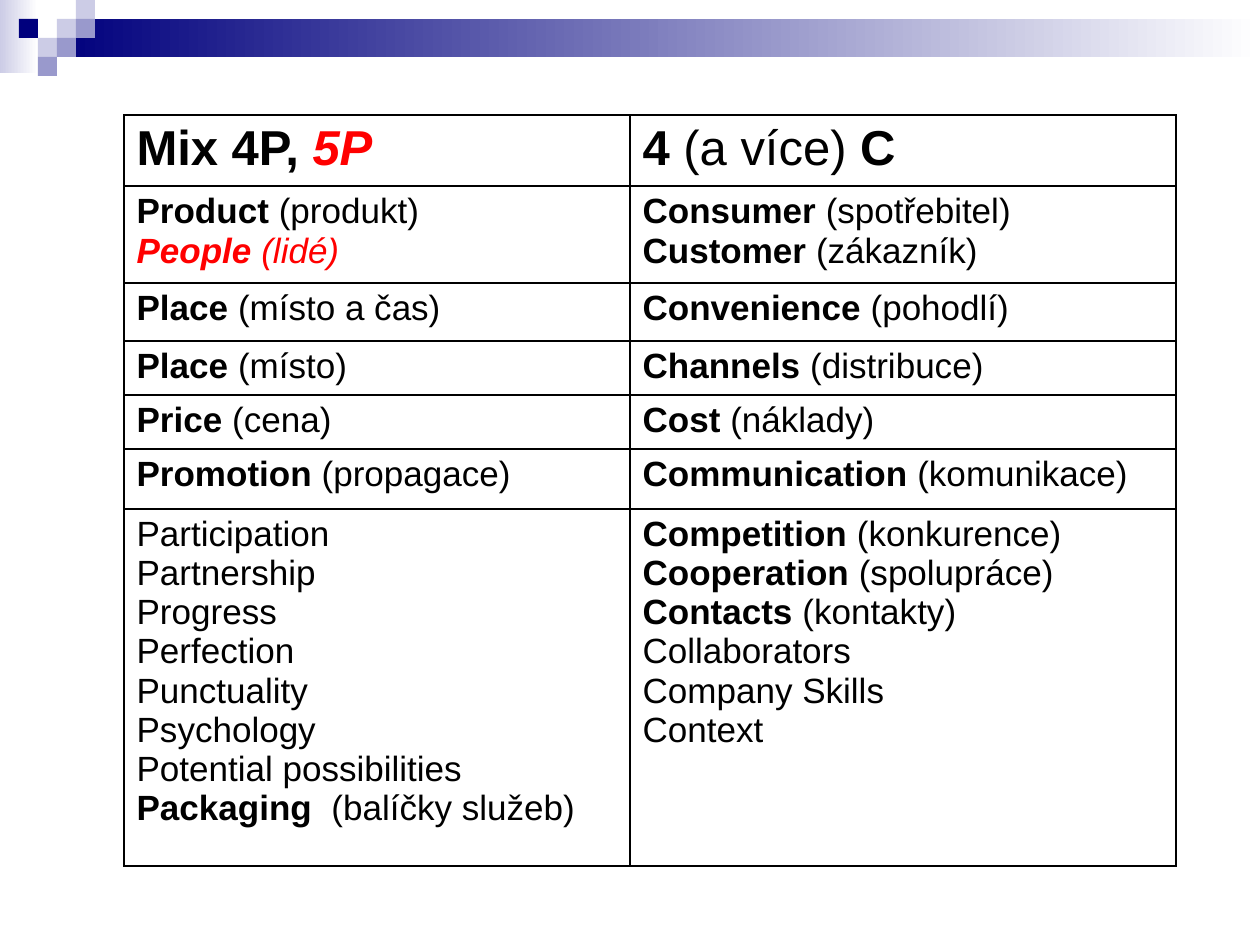
from lxml.etree import SubElement
from pptx import Presentation
from pptx.dml.color import RGBColor
from pptx.enum.shapes import MSO_SHAPE
from pptx.oxml.ns import qn
from pptx.util import Pt

PX = 914400 // 126
NAVY = RGBColor(0x00, 0x00, 0x7D)
LILAC = RGBColor(0xCC, 0xCC, 0xE6)
VIOLET = RGBColor(0x99, 0x99, 0xCC)
WHITE = RGBColor(0xFF, 0xFF, 0xFF)
BLACK = RGBColor(0x00, 0x00, 0x00)
RED = RGBColor(0xFF, 0x00, 0x00)

BOLD = dict(bold=True)
RED_ITALIC = dict(italic=True, color=RED)
RED_BOLD = dict(bold=True, italic=True, color=RED)

SQUARES = [(3, 1, LILAC), (4, 0, LILAC), (4, 1, VIOLET), (2, 2, LILAC),
           (1, 1, NAVY), (3, 2, VIOLET), (2, 3, VIOLET)]


def term(name, note):
    return [(name, BOLD), (note, {})]


def plain(*lines):
    return [[(line, {})] for line in lines]


COLUMNS = [506, 546]
HEADER = [[[("Mix 4P, ", BOLD), ("5P", RED_BOLD)]],
          [[("4 ", BOLD), ("(a více)", {}), (" C", BOLD)]]]
ROWS = [
    (97, [[term("Product ", "(produkt)"),
           [("People ", RED_BOLD), ("(lidé)", RED_ITALIC)]],
          [term("Consumer ", "(spotřebitel) ") + term("Customer ", "(zákazník)")]]),
    (58, [[term("Place ", "(místo a čas)")], [term("Convenience ", "(pohodlí)")]]),
    (54, [[term("Place ", "(místo)")], [term("Channels ", "(distribuce)")]]),
    (54, [[term("Price ", "(cena)")], [term("Cost ", "(náklady)")]]),
    (60, [[term("Promotion ", "(propagace)")],
          [term("Communication ", "(komunikace)")]]),
    (357, [plain("Participation", "Partnership", "Progress", "Perfection",
                 "Punctuality", "Psychology", "Potential possibilities")
           + [term("Packaging ", " (balíčky služeb)")],
           [term("Competition ", "(konkurence)"),
            term("Cooperation", " (spolupráce)"),
            term("Contacts ", "(kontakty)")]
           + plain("Collaborators", "Company Skills", "Context")]),
]


def add_run(p, text, size=20, bold=False, italic=False, color=BLACK):
    r = p.add_run()
    r.text = text
    r.font.name = "Arial"
    r.font.size = Pt(size)
    r.font.bold = bold
    r.font.italic = italic
    r.font.color.rgb = color


def add_rect(s, x, y, w, h, color, fade=False):
    sp = s.shapes.add_shape(MSO_SHAPE.RECTANGLE, x * PX, y * PX, w * PX, h * PX)
    sp.shadow.inherit = False
    sp.line.fill.background()
    if fade:
        sp.fill.gradient()
        sp.fill.gradient_angle = 0
        for stop, rgb in zip(sp.fill.gradient_stops, (color, WHITE)):
            stop.color.rgb = rgb
    else:
        sp.fill.solid()
        sp.fill.fore_color.rgb = color


def add_banner(s, x, y, w, unit):
    add_rect(s, x, y, 2 * unit, 73, LILAC, fade=True)
    add_rect(s, x + 3 * unit, y + unit, w - 3 * unit, 2 * unit, NAVY, fade=True)
    for col, row, color in SQUARES:
        add_rect(s, x + col * unit, y + row * unit, unit, unit, color)


def add_borders(cell):
    tcPr = cell._tc.get_or_add_tcPr()
    for i, side in enumerate(("lnL", "lnR", "lnT", "lnB")):
        ln = tcPr.makeelement(qn(f"a:{side}"), {"w": str(Pt(1))})
        fill = SubElement(ln, qn("a:solidFill"))
        SubElement(fill, qn("a:srgbClr"), val=str(BLACK))
        tcPr.insert(i, ln)


def fill_cell(cell, paragraphs, size):
    cell.fill.solid()
    cell.fill.fore_color.rgb = WHITE
    add_borders(cell)
    tf = cell.text_frame
    for i, runs in enumerate(paragraphs):
        p = tf.add_paragraph() if i else tf.paragraphs[0]
        for text, style in runs:
            add_run(p, text, size=size, **style)


def add_mix_table(s, x, y):
    rows = [(71, HEADER)] + ROWS
    height = sum(h for h, _ in rows)
    table = s.shapes.add_table(len(rows), len(COLUMNS), x * PX, y * PX,
                               sum(COLUMNS) * PX, height * PX).table
    table.first_row = False
    table.horz_banding = False
    for col, w in zip(table.columns, COLUMNS):
        col.width = w * PX
    for i, (h, cells) in enumerate(rows):
        table.rows[i].height = h * PX
        for j, paragraphs in enumerate(cells):
            fill_cell(table.cell(i, j), paragraphs, 20 if i else 28)


def main():
    prs = Presentation()
    prs.slide_width = 1260 * PX
    prs.slide_height = 945 * PX
    s = prs.slides.add_slide(prs.slide_layouts[6])
    add_banner(s, 0, 0, 1260, 19)
    add_mix_table(s, 124, 115)
    prs.save("out.pptx")


if __name__ == "__main__":
    main()
